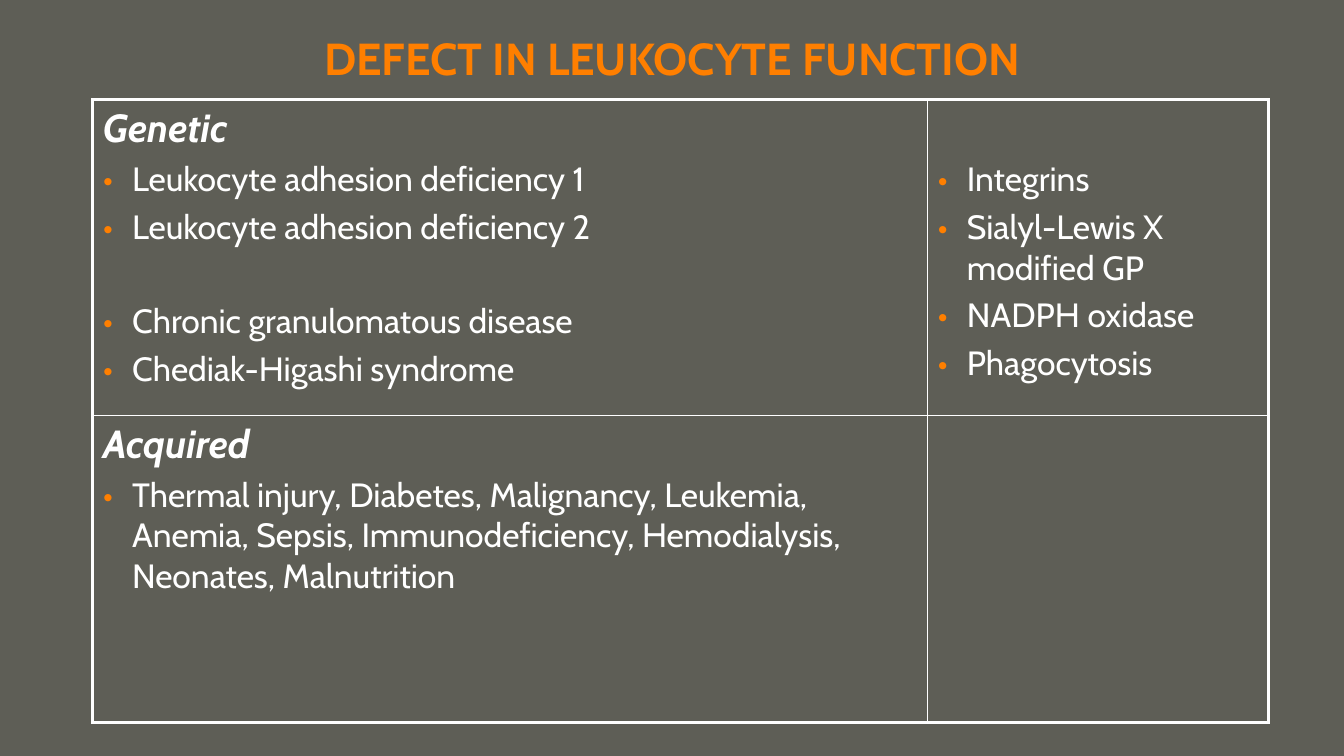
from dataclasses import dataclass
from typing import Any

from lxml.etree import SubElement
from pptx import Presentation
from pptx.dml.color import RGBColor
from pptx.enum.text import MSO_ANCHOR, MSO_AUTO_SIZE, PP_ALIGN
from pptx.oxml.ns import qn
from pptx.util import Inches, Pt

FONT = "Cabin"
WHITE = "FFFFFF"
ORANGE = "FF7F00"
BACKGROUND = "5E5E56"
OUTER_LINE = 2.25
INNER_LINE = 1
INDENT = 0.29
ITEM_SPACE = 4.8


@dataclass(frozen=True)
class Entry:
    text: str
    heading: bool = False
    space_before: float = ITEM_SPACE


@dataclass(frozen=True)
class CellContent:
    entries: tuple[Entry, ...] = ()
    margin_top: float = 0.05


ROWS = (
    (
        CellContent((
            Entry("Genetic", heading=True),
            Entry("Leukocyte adhesion deficiency 1"),
            Entry("Leukocyte adhesion deficiency 2"),
            Entry("Chronic granulomatous disease", space_before=38.6),
            Entry("Chediak-Higashi syndrome"),
        )),
        CellContent((
            Entry("Integrins"),
            Entry("Sialyl-Lewis X modified GP"),
            Entry("NADPH oxidase"),
            Entry("Phagocytosis"),
        ), margin_top=0.59),
    ),
    (
        CellContent((
            Entry("Acquired", heading=True),
            Entry("Thermal injury, Diabetes, Malignancy, Leukemia, Anemia, Sepsis, "
                  "Immunodeficiency, Hemodialysis, Neonates, Malnutrition"),
        )),
        CellContent(),
    ),
)
COLUMN_WIDTHS = (8.28, 3.38)
ROW_HEIGHTS = (3.13, 3.05)


def color(value: str) -> RGBColor:
    return RGBColor.from_string(value)


def format_text(para: Any, size: float, value: str, bold: bool, italic: bool = False) -> None:
    for span in para.runs:
        span.font.name = FONT
        span.font.size = Pt(size)
        span.font.bold = bold
        span.font.italic = italic
        span.font.color.rgb = color(value)


def add_bullet(para: Any) -> None:
    properties = para._p.get_or_add_pPr()
    properties.set("marL", str(Inches(INDENT)))
    properties.set("indent", str(-Inches(INDENT)))
    bullet_color = SubElement(properties, qn("a:buClr"))
    SubElement(bullet_color, qn("a:srgbClr"), val=ORANGE)
    SubElement(properties, qn("a:buFont"), typeface=FONT)
    SubElement(properties, qn("a:buChar"), char="•")


def draw_borders(cell: Any, row: int, column: int) -> None:
    properties = cell._tc.get_or_add_tcPr()
    outer_sides = {
        "L": column == 0,
        "R": column == len(COLUMN_WIDTHS) - 1,
        "T": row == 0,
        "B": row == len(ROW_HEIGHTS) - 1,
    }
    for side, outer in outer_sides.items():
        width = Pt(OUTER_LINE if outer else INNER_LINE)
        line = SubElement(properties, qn(f"a:ln{side}"), w=str(width))
        fill = SubElement(line, qn("a:solidFill"))
        SubElement(fill, qn("a:srgbClr"), val=WHITE)


def fill_cell(cell: Any, content: CellContent) -> None:
    cell.fill.background()
    cell.margin_top = Inches(content.margin_top)
    frame = cell.text_frame
    for index, entry in enumerate(content.entries):
        para = frame.add_paragraph() if index else frame.paragraphs[0]
        para.text = entry.text
        if not entry.heading:
            add_bullet(para)
        if index:
            para.space_before = Pt(entry.space_before)
        format_text(para, 28 if entry.heading else 24, WHITE, entry.heading, entry.heading)


def add_title(page: Any) -> None:
    title = page.shapes.title
    title.left, title.top = Inches(2.17), Inches(0.3)
    title.width, title.height = Inches(9), Inches(0.54)
    frame = title.text_frame
    frame.text = "DEFECT IN LEUKOCYTE FUNCTION"
    frame.word_wrap = True
    frame.auto_size = MSO_AUTO_SIZE.NONE
    frame.vertical_anchor = MSO_ANCHOR.MIDDLE
    para = frame.paragraphs[0]
    para.alignment = PP_ALIGN.CENTER
    format_text(para, 32, ORANGE, True)


def add_defect_table(page: Any) -> None:
    table = page.shapes.add_table(
        len(ROW_HEIGHTS), len(COLUMN_WIDTHS), Inches(0.92), Inches(0.99),
        Inches(sum(COLUMN_WIDTHS)), Inches(sum(ROW_HEIGHTS)),
    ).table
    table.first_row = False
    table.horz_banding = False
    for column, width in zip(table.columns, COLUMN_WIDTHS):
        column.width = Inches(width)
    for row, height in zip(table.rows, ROW_HEIGHTS):
        row.height = Inches(height)
    for row_index, contents in enumerate(ROWS):
        for column_index, content in enumerate(contents):
            cell = table.cell(row_index, column_index)
            draw_borders(cell, row_index, column_index)
            fill_cell(cell, content)


def main() -> None:
    deck = Presentation()
    deck.slide_width, deck.slide_height = Inches(13.33), Inches(7.5)
    page = deck.slides.add_slide(deck.slide_layouts[5])
    page.background.fill.solid()
    page.background.fill.fore_color.rgb = color(BACKGROUND)
    add_defect_table(page)
    add_title(page)
    deck.save("out.pptx")


if __name__ == "__main__":
    main()
